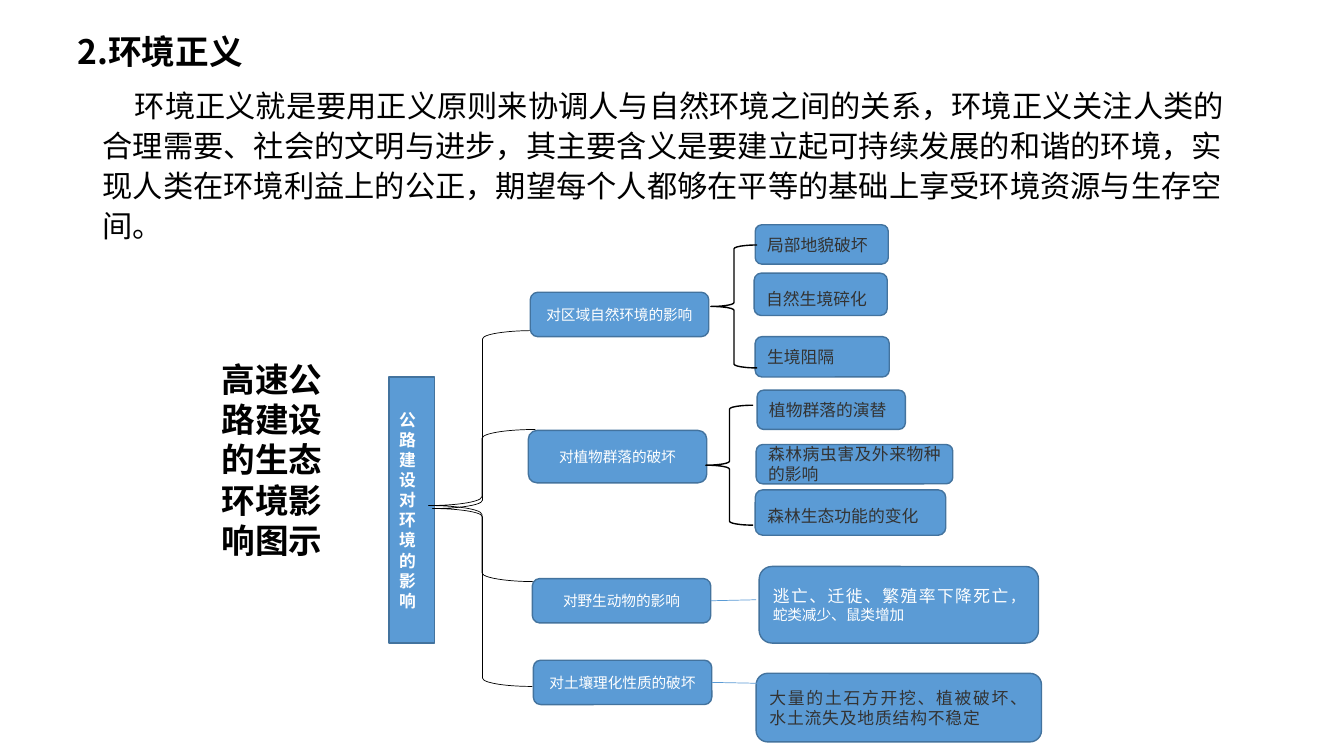
from dataclasses import dataclass

from lxml import etree
from pptx import Presentation
from pptx.dml.color import RGBColor
from pptx.enum.shapes import MSO_CONNECTOR, MSO_SHAPE
from pptx.enum.text import MSO_ANCHOR, PP_ALIGN
from pptx.oxml.ns import qn
from pptx.util import Inches, Pt

RECTANGLE, ROUNDED = MSO_SHAPE.RECTANGLE, MSO_SHAPE.ROUNDED_RECTANGLE
BRACE, STRAIGHT = MSO_SHAPE.RIGHT_BRACE, MSO_CONNECTOR.STRAIGHT
TOP, MIDDLE = MSO_ANCHOR.TOP, MSO_ANCHOR.MIDDLE
LEFT, CENTER, JUSTIFY = PP_ALIGN.LEFT, PP_ALIGN.CENTER, PP_ALIGN.JUSTIFY
RIGHT_SIDE = 3


@dataclass(frozen=True)
class Theme:
    latin: str = "Calibri"
    chinese: str = "Noto Sans CJK SC"
    black: RGBColor = RGBColor(0, 0, 0)
    white: RGBColor = RGBColor(255, 255, 255)
    dark: RGBColor = RGBColor(0x33, 0x33, 0x33)
    blue: RGBColor = RGBColor(0x5B, 0x9B, 0xD5)
    outline: RGBColor = RGBColor(0x43, 0x73, 0x9E)
    heading: float = 24
    body: float = 21.6
    detail: float = 12
    branch: float = 10.5
    tracking: float = 0.6


THEME = Theme()

ROOT = ("公路建设对环境的影响", (3.86, 3.74, 0.45, 2.64))
BRANCHES = [
    ("对区域自然环境的影响", (5.26, 2.9, 1.77, 0.44)),
    ("对植物群落的破坏", (5.24, 4.27, 1.77, 0.52)),
    ("对野生动物的影响", (5.28, 5.74, 1.77, 0.44)),
    ("对土壤理化性质的破坏", (5.29, 6.55, 1.77, 0.44)),
]
# Text, box, anchor, exact line height in points
EFFECTS = [
    ("局部地貌破坏", (7.49, 2.23, 1.32, 0.39), MIDDLE, None),
    ("自然生境碎化", (7.48, 2.71, 1.32, 0.42), TOP, 20.4),
    ("生境阻隔", (7.49, 3.34, 1.33, 0.4), MIDDLE, None),
    ("植物群落的演替", (7.51, 3.87, 1.47, 0.39), MIDDLE, None),
    ("森林病虫害及外来物种的影响", (7.5, 4.41, 1.95, 0.39), MIDDLE, None),
    ("森林生态功能的变化", (7.49, 4.86, 1.89, 0.45), TOP, 20.4),
]
WILDLIFE = ("逃亡、迁徙、繁殖率下降死亡", (7.53, 5.62, 2.77, 0.76))
WILDLIFE_MORE = "，蛇类减少、鼠类增加"
SOIL = ("大量的土石方开挖、植被破坏、水土流失及地质结构不稳定", (7.5, 6.68, 2.83, 0.68))
ROOT_BRACES = [(4.29, 3.28, 0.99, 3.53), (4.25, 4.26, 1.06, 1.51)]
BRANCH_BRACES = [(7.05, 2.43, 0.46, 1.22), (7, 4.02, 0.47, 1.19)]
LINK_ENDS = [(7.5, 5.95), (7.58, 6.78)]

TITLE = "2.环境正义"
BODY = (
    "环境正义就是要用正义原则来协调人与自然环境之间的关系，"
    "环境正义关注人类的合理需要、社会的文明与进步，"
    "其主要含义是要建立起可持续发展的和谐的环境，实现人类在环境利益上的公正，"
    "期望每个人都够在平等的基础上享受环境资源与生存空间。"
)
CAPTION = "高速公路建设的生态环境影响图示"


def inches(box):
    return [Inches(value) for value in box]


def set_font(font, properties, size, color, name, bold=False, tracking=0):
    """Style a font, with the Chinese typeface and letter spacing in XML."""
    font.size, font.bold, font.name = Pt(size), bold, name
    font.color.rgb = color
    etree.SubElement(properties, qn("a:ea")).set("typeface", THEME.chinese)
    properties.set("spc", str(round(tracking * 100)))


def write(shape, text, size, color, name=THEME.latin, align=LEFT, anchor=TOP,
          bold=False, tracking=0, spacing=None):
    frame = shape.text_frame
    frame.word_wrap = True
    frame.vertical_anchor = anchor
    paragraph = frame.paragraphs[0]
    paragraph.add_run().text = text
    paragraph.alignment = align
    if spacing:
        paragraph.line_spacing = spacing
    properties = paragraph._p.get_or_add_pPr().get_or_add_defRPr()
    set_font(paragraph.font, properties, size, color, name, bold, tracking)
    return paragraph


def add_text(slide, box, text, size, **style):
    shape = slide.shapes.add_textbox(*inches(box))
    return write(shape, text, size, THEME.black, **style)


def add_node(slide, kind, box):
    shape = slide.shapes.add_shape(kind, *inches(box))
    shape.shadow.inherit = False
    shape.fill.solid()
    shape.fill.fore_color.rgb = THEME.blue
    shape.line.color.rgb = THEME.outline
    shape.line.width = Pt(1)
    return shape


def add_brace(slide, box, width):
    brace = slide.shapes.add_shape(BRACE, *inches(box))
    brace.rotation = 180
    brace.shadow.inherit = False
    brace.fill.background()
    brace.line.color.rgb = THEME.black
    brace.line.width = Pt(width)


def add_link(slide, branch, end):
    start = (branch.left + branch.width, branch.top + branch.height // 2)
    link = slide.shapes.add_connector(STRAIGHT, *start, *inches(end))
    link.begin_connect(branch, RIGHT_SIDE)
    link.line.color.rgb = THEME.blue
    link.line.width = Pt(0.5)
    etree.SubElement(link._element.spPr, qn("a:effectLst"))


def add_passages(slide):
    add_text(slide, (0.67, 0.17, 11.5, 0.73), TITLE, THEME.heading,
             name=THEME.chinese, anchor=MIDDLE, bold=True, spacing=0.9)
    body = add_text(slide, (0.92, 0.78, 11.5, 1.87), BODY, THEME.body,
                    name=THEME.chinese, spacing=1.1)
    body.space_before = Pt(10)
    body._p.get_or_add_pPr().set("indent", str(Inches(0.32)))
    add_text(slide, (2.1, 3.51, 1.32, 3.27), CAPTION, THEME.heading, bold=True)


def add_diagram(slide):
    text, box = ROOT
    write(add_node(slide, RECTANGLE, box), text, THEME.detail, THEME.white,
          align=JUSTIFY, anchor=MIDDLE, bold=True)
    for box in ROOT_BRACES:
        add_brace(slide, box, 0.5)

    branches = []
    for text, box in BRANCHES:
        branch = add_node(slide, ROUNDED, box)
        write(branch, text, THEME.branch, THEME.white, align=CENTER, anchor=MIDDLE)
        branches.append(branch)

    for text, box, anchor, height in EFFECTS:
        write(add_node(slide, ROUNDED, box), text, THEME.detail, THEME.dark,
              THEME.chinese, LEFT if height else JUSTIFY, anchor,
              spacing=Pt(height) if height else None)

    for (text, box), color in ((WILDLIFE, THEME.white), (SOIL, THEME.dark)):
        paragraph = write(add_node(slide, ROUNDED, box), text, THEME.detail, color,
                          THEME.chinese, JUSTIFY, MIDDLE, tracking=THEME.tracking)
        if text == WILDLIFE[0]:
            run = paragraph.add_run()
            run.text = WILDLIFE_MORE
            set_font(run.font, run._r.get_or_add_rPr(), THEME.branch, color, THEME.latin)

    for box in BRANCH_BRACES:
        add_brace(slide, box, 1)
    for branch, end in zip(branches[2:], LINK_ENDS):
        add_link(slide, branch, end)


def main():
    presentation = Presentation()
    presentation.slide_width = Inches(13.33)
    presentation.slide_height = Inches(7.5)
    slide = presentation.slides.add_slide(presentation.slide_layouts[6])
    add_passages(slide)
    add_diagram(slide)
    presentation.save("out.pptx")


if __name__ == "__main__":
    main()
